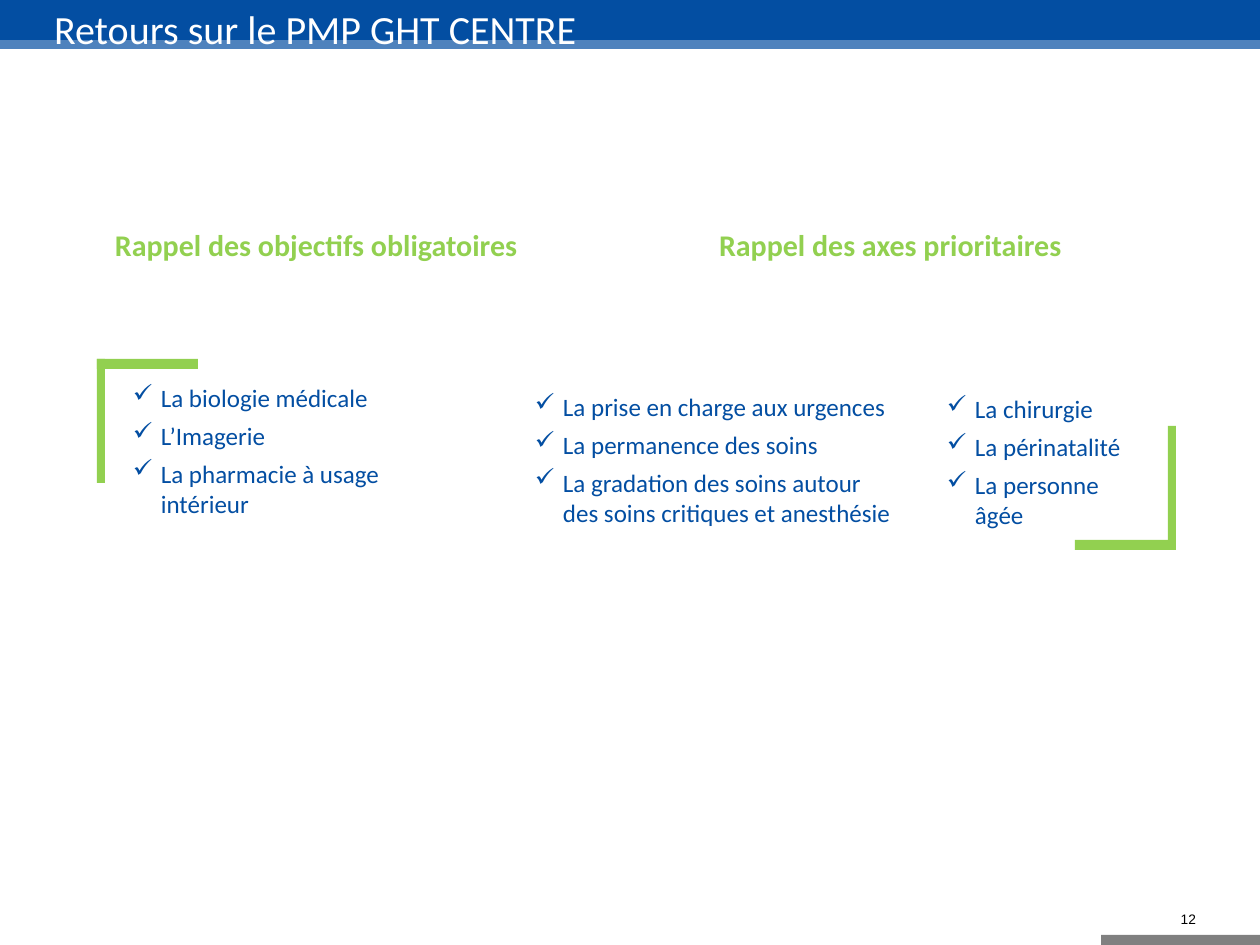
import pptx
import pptx.util
import pptx.oxml
import pptx.oxml.ns
import pptx.dml.color
import pptx.enum.shapes
import pptx.enum.text
import lxml.etree

RGB = pptx.dml.color.RGBColor
BLUE = RGB(0x03, 0x4E, 0xA2)
GREEN = RGB(0x92, 0xD0, 0x50)
GREY = RGB(0x80, 0x80, 0x80)
BLACK = RGB(0, 0, 0)
WHITE = RGB(0xFF, 0xFF, 0xFF)

PX = 10160  # EMU, at 90 px to the inch
WIDE, HIGH = 1260, 945
Pt = pptx.util.Pt
qn = pptx.oxml.ns.qn
ALIGN = pptx.enum.text.PP_ALIGN
ANCHOR = pptx.enum.text.MSO_ANCHOR
AUTO = pptx.enum.text.MSO_AUTO_SIZE

deck = pptx.Presentation()
deck.slide_width, deck.slide_height = WIDE * PX, HIGH * PX
slide = deck.slides.add_slide(deck.slide_layouts[5])
shapes = slide.shapes


def bar(x, y, w, h, color):
    """Add a plain filled rectangle."""
    rect = shapes.add_shape(pptx.enum.shapes.MSO_SHAPE.RECTANGLE,
                            x * PX, y * PX, w * PX, h * PX)
    rect.shadow.inherit = False
    rect.fill.solid()
    rect.fill.fore_color.rgb = color
    rect.line.fill.background()
    return rect


def write(box, lines, inset, size, color, font="Calibri", bold=False,
          align=ALIGN.LEFT, anchor=ANCHOR.TOP, wrap=True):
    """Fill a box with one paragraph per line; inset is (sides, ends) in px."""
    frame = box.text_frame
    side, end = (n * PX for n in inset)
    look = {"margin_left": side, "margin_right": side, "margin_top": end,
            "margin_bottom": end, "vertical_anchor": anchor,
            "auto_size": AUTO.NONE, "word_wrap": wrap}
    for name, value in look.items():
        setattr(frame, name, value)
    frame.text = "\n".join(lines)
    for para in frame.paragraphs:
        para.alignment = align
        style = {"name": font, "size": Pt(size), "bold": bold}
        for name, value in style.items():
            setattr(para.runs[0].font, name, value)
        para.runs[0].font.color.rgb = color


# Header and footer bars
band = bar(0, 40, WIDE, 9, BLUE)
tint = band.fill._xPr.find(qn("a:solidFill"))[0]
lxml.etree.SubElement(tint, qn("a:alpha")).set("val", "70000")
bar(0, 0, WIDE, 40, BLUE)
bar(1101, 935, 159, 10, GREY)

page = shapes.add_textbox(1041 * PX, 911 * PX, 159 * PX, 17 * PX)
write(page, ["12"], (4, 0), 11, BLACK, font="Arial",
      align=ALIGN.RIGHT, anchor=ANCHOR.MIDDLE)

title = shapes.title
title.left, title.top = 54 * PX, 8 * PX
title.width, title.height = 1146 * PX, 41 * PX
write(title, ["Retours sur le PMP GHT CENTRE"], (0, 0), 32, WHITE,
      anchor=ANCHOR.MIDDLE)
shapes._spTree.append(title._element)  # bring in front of the bars

# Corner brackets: top left, then bottom right
left, top, right, low = 97, 359, 1176, 550
arm, leg = 101, 124
bar(left, top, arm, 10, GREEN)
bar(left, top, 8, leg, GREEN)
bar(right - arm, low - 10, arm, 10, GREEN)
bar(right - 8, low - leg, 8, leg, GREEN)

# Headings
for x, w, text in [(115, 416, "Rappel des objectifs obligatoires"),
                   (719, 355, "Rappel des axes prioritaires")]:
    head = shapes.add_textbox(x * PX, 221 * PX, w * PX, 50 * PX)
    write(head, [text], (0, 5), 24, GREEN, bold=True, wrap=False)

# Ticked lists
LISTS = [
    ((83, 378, 390, 144), (9, 5),
     ["La biologie médicale", "L’Imagerie", "La pharmacie à usage intérieur"]),
    ((482, 386, 425, 242), (12, 6),
     ["La prise en charge aux urgences", "La permanence des soins",
      "La gradation des soins autour des soins critiques et anesthésie"]),
    ((894, 388, 270, 194), (12, 6),
     ["La chirurgie", "La périnatalité", "La personne âgée"]),
]
for place, inset, items in LISTS:
    box = shapes.add_textbox(*(n * PX for n in place))
    write(box, items, inset, 20, BLUE)
    for para in box.text_frame.paragraphs:
        para.level = 1
        para.space_after = Pt(6)
        props = para._p.get_or_add_pPr()
        props.set("marL", str(69 * PX))
        props.set("indent", str(-28 * PX))
        lxml.etree.SubElement(props, qn("a:buChar")).set("char", "✓")

deck.save("out.pptx")
